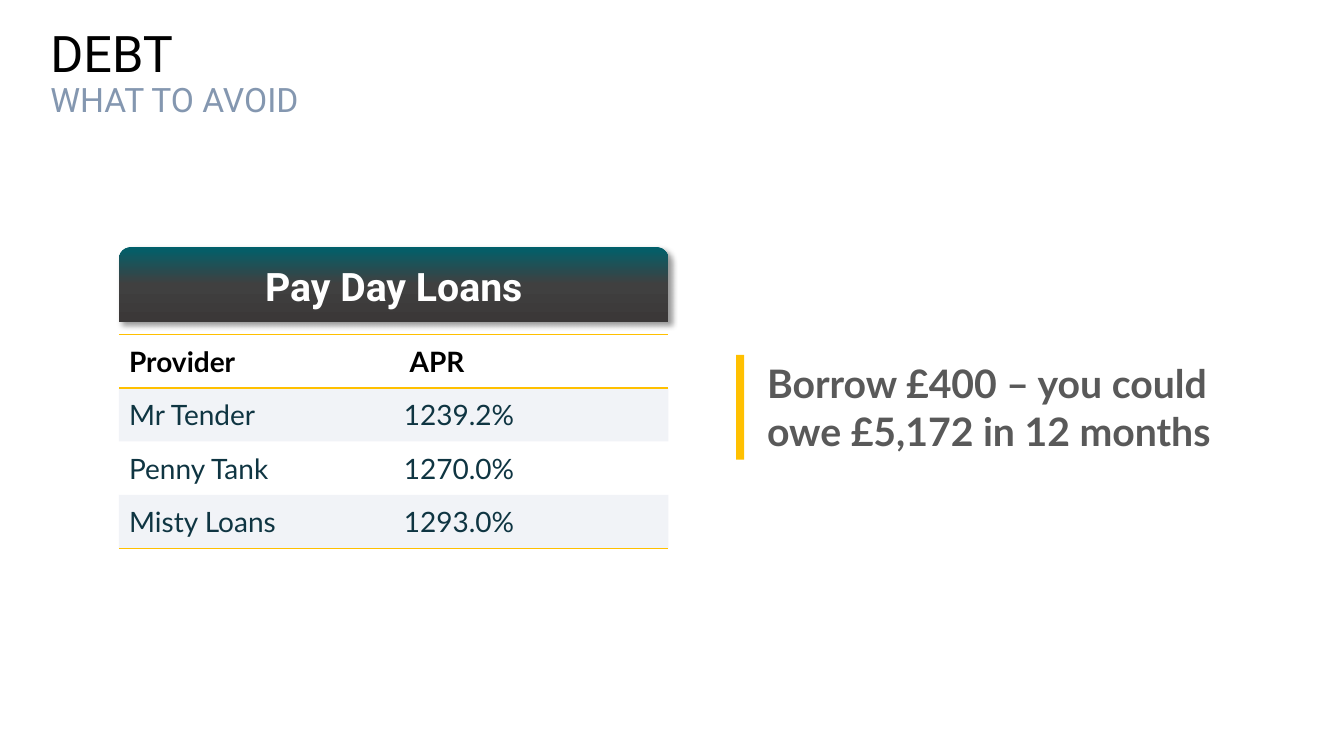
import pptx
import pptx.dml.color
import pptx.enum.shapes
import pptx.enum.text
import pptx.oxml
import pptx.util

Inches = pptx.util.Inches
SHAPES = pptx.enum.shapes.MSO_SHAPE
ALIGN = pptx.enum.text.PP_ALIGN
MIDDLE = pptx.enum.text.MSO_ANCHOR.MIDDLE
NAMESPACE = 'xmlns:a="http://schemas.openxmlformats.org/drawingml/2006/main"'
GOLD = "FFC000"


def color(value):
    return pptx.dml.color.RGBColor.from_string(value)


def write(para, text, font="Lato", size=20, ink="000000", bold=False,
          align=ALIGN.LEFT, spacing=None):
    para.alignment = align
    para.line_spacing = spacing
    span = para.add_run()
    span.text = text
    span.font.name = font
    span.font.size = pptx.util.Pt(size)
    span.font.bold = bold
    span.font.color.rgb = color(ink)


deck = pptx.Presentation()
deck.slide_width, deck.slide_height = Inches(13.33), Inches(7.5)
page = deck.slides.add_slide(deck.slide_layouts[5])

# Title and subtitle
title = page.shapes.title
title.left, title.top = Inches(0.4), Inches(0.34)
title.width, title.height = Inches(10.19), Inches(0.8)
frame = title.text_frame
frame.vertical_anchor = MIDDLE
frame.auto_size = pptx.enum.text.MSO_AUTO_SIZE.NONE
write(frame.paragraphs[0], "DEBT", font="Roboto", size=36, spacing=0.9)
write(frame.add_paragraph(), "WHAT TO AVOID", font="Roboto", size=24,
      ink="8497B0", spacing=0.9)

# Loan table
left, width, row_height = Inches(1.18), Inches(5.45), Inches(0.53)
rows = [
    ("Provider", " APR"),
    ("Mr Tender", "1239.2%"),
    ("Penny Tank", "1270.0%"),
    ("Misty Loans", "1293.0%"),
]
holder = page.shapes.add_table(len(rows), 2, left, Inches(3.32), width,
                               row_height * len(rows))
table = holder.table
# Plain style without grid lines
table._tbl.tblPr[0].text = "{2D5ABB26-0587-4C30-8999-92F81FD0307C}"
borders = {0: ("lnT", "lnB"), len(rows) - 1: ("lnB",)}
for row, values in enumerate(rows):
    for column, value in enumerate(values):
        cell = table.cell(row, column)
        cell.vertical_anchor = MIDDLE
        write(cell.text_frame.paragraphs[0], value, bold=row == 0,
              ink="000000" if row == 0 else "0F3542")
        properties = cell._tc.get_or_add_tcPr()
        if row % 2:
            cell.fill.solid()
            cell.fill.fore_color.rgb = color("BCC3DA")
            properties.find(".//{*}srgbClr").append(pptx.oxml.parse_xml(
                f'<a:alpha {NAMESPACE} val="20000"/>'))
        else:
            cell.fill.background()
        for position, side in enumerate(borders.get(row, ())):
            properties.insert(position, pptx.oxml.parse_xml(
                f'<a:{side} {NAMESPACE} w="12700"><a:solidFill>'
                f'<a:srgbClr val="{GOLD}"/></a:solidFill></a:{side}>'))

# Table heading with gradient and soft shadow
heading = page.shapes.add_shape(SHAPES.ROUND_2_SAME_RECTANGLE, left,
                                Inches(2.45), width, Inches(0.74))
heading.line.fill.background()
heading.fill.gradient()
heading.fill.gradient_angle = 270
stops = heading._element.spPr.find(".//{*}gsLst")
for stop in list(stops):
    stops.remove(stop)
for share, ink in ((0, "00606B"), (50, "404040"), (100, "3B3838")):
    stops.append(pptx.oxml.parse_xml(
        f'<a:gs {NAMESPACE} pos="{share * 1000}"><a:srgbClr val="{ink}"/></a:gs>'))
heading.shadow.inherit = False
heading._element.spPr.find("{*}effectLst").append(pptx.oxml.parse_xml(
    f'<a:outerShdw {NAMESPACE} blurRad="50800" dist="38100" dir="2700000" '
    'algn="tl" rotWithShape="0"><a:srgbClr val="000000">'
    '<a:alpha val="40000"/></a:srgbClr></a:outerShdw>'))
heading.text_frame.vertical_anchor = MIDDLE
write(heading.text_frame.paragraphs[0], "Pay Day Loans", font="Roboto",
      size=28, ink="FFFFFF", bold=True, align=ALIGN.CENTER)

# Callout with gold bar
callout_top, callout_height = Inches(3.52), Inches(1.04)
callout = page.shapes.add_textbox(Inches(7.51), callout_top, Inches(5.37),
                                  callout_height)
callout.text_frame.word_wrap = True
callout.text_frame.auto_size = pptx.enum.text.MSO_AUTO_SIZE.SHAPE_TO_FIT_TEXT
write(callout.text_frame.paragraphs[0],
      "Borrow £400 – you could owe £5,172 in 12 months",
      size=28, ink="595959", bold=True)
bar = page.shapes.add_shape(SHAPES.RECTANGLE, Inches(7.3), callout_top,
                            Inches(0.08), callout_height)
bar.shadow.inherit = False
bar.fill.solid()
bar.fill.fore_color.rgb = color(GOLD)
bar.line.fill.background()

deck.save("out.pptx")
